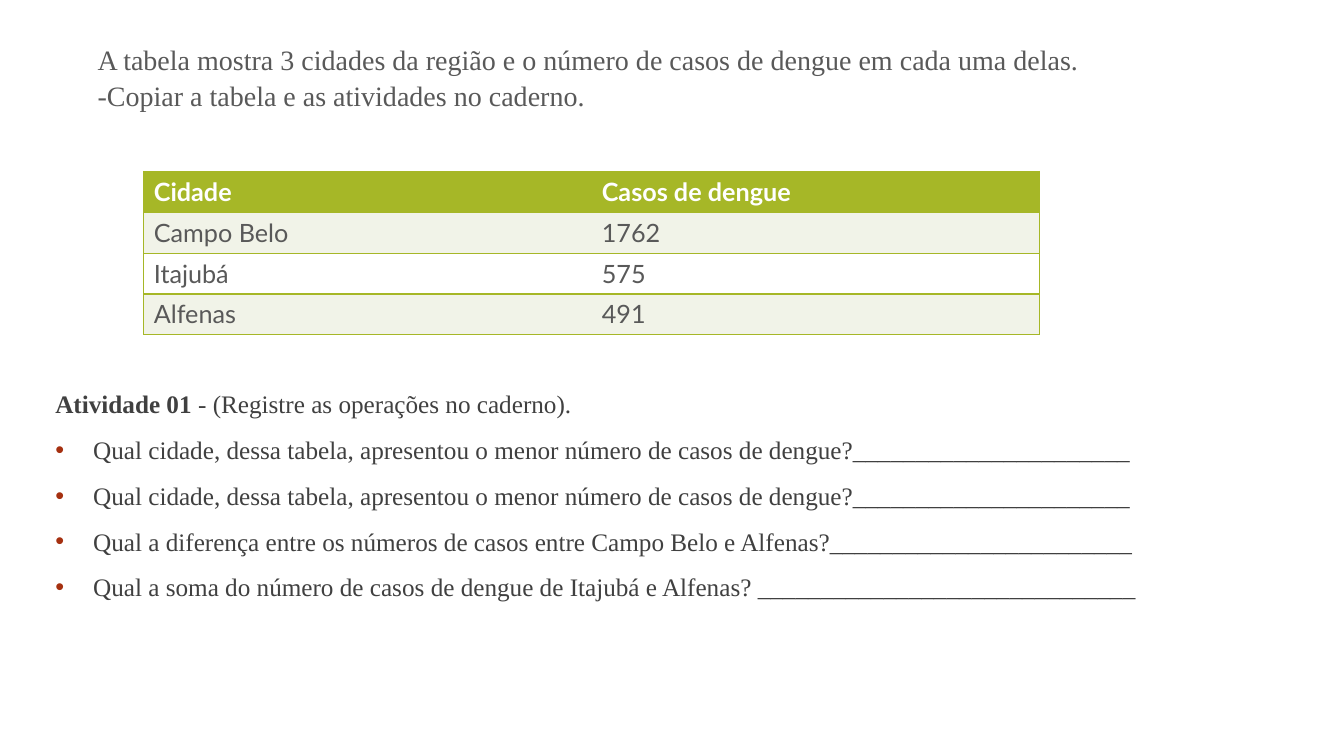
from dataclasses import dataclass

from lxml.etree import SubElement
from pptx import Presentation
from pptx.dml.color import RGBColor
from pptx.enum.text import MSO_ANCHOR
from pptx.oxml import parse_xml
from pptx.oxml.ns import nsdecls, qn
from pptx.util import Pt


@dataclass(frozen=True)
class Theme:
    serif: str = "Times New Roman"
    sans: str = "Lato"
    intro_size: int = 20
    body_size: int = 18
    line_spacing: float = 1.05
    question_gap: int = 10
    question_indent: int = 27
    border_width: int = 1
    gray: str = "595959"
    dark: str = "404040"
    white: str = "FFFFFF"
    green: str = "A6B727"
    pale: str = "F1F3E8"
    rust: str = "A53010"


THEME = Theme()

INTRO = [
    "A tabela mostra 3 cidades da região e o número de casos de dengue em cada uma delas.",
    "-Copiar a tabela e as atividades no caderno.",
]
CASES = [
    ("Cidade", "Casos de dengue"),
    ("Campo Belo", "1762"),
    ("Itajubá", "575"),
    ("Alfenas", "491"),
]
# Each question with the length of its answer line
QUESTIONS = [
    ("Qual cidade, dessa tabela, apresentou o menor número de casos de dengue?", 22),
    ("Qual cidade, dessa tabela, apresentou o menor número de casos de dengue?", 22),
    ("Qual a diferença entre os números de casos entre Campo Belo e Alfenas?", 24),
    ("Qual a soma do número de casos de dengue de Itajubá e Alfenas? ", 30),
]


def write(paragraph, text, *, size=THEME.body_size, face=THEME.serif,
          color=THEME.dark, bold=False):
    run = paragraph.add_run()
    run.text = text
    run.font.size = Pt(size)
    run.font.name = face
    run.font.bold = bold
    run.font.color.rgb = RGBColor.from_string(color)


def add_frame(slide, left, top, width, height):
    frame = slide.shapes.add_textbox(Pt(left), Pt(top), Pt(width), Pt(height)).text_frame
    frame.word_wrap = True
    frame.vertical_anchor = MSO_ANCHOR.TOP
    return frame


def add_bullet(paragraph):
    properties = paragraph._p.get_or_add_pPr()
    properties.set("marL", str(Pt(THEME.question_indent)))
    properties.set("indent", str(-Pt(THEME.question_indent)))
    bullet_color = SubElement(properties, qn("a:buClr"))
    SubElement(bullet_color, qn("a:srgbClr"), val=THEME.rust)
    SubElement(properties, qn("a:buFont"), typeface="Arial")
    SubElement(properties, qn("a:buChar"), char="•")


def set_borders(cell, shown):
    properties = cell._tc.get_or_add_tcPr()
    for position, side in enumerate("LRTB"):
        paint = (f'<a:solidFill><a:srgbClr val="{THEME.green}"/></a:solidFill>'
                 if side in shown else "<a:noFill/>")
        border = parse_xml(f'<a:ln{side} {nsdecls("a")} w="{Pt(THEME.border_width)}">'
                           f'{paint}</a:ln{side}>')
        properties.insert(position, border)


def add_intro(slide, left, top, width, height):
    paragraph = add_frame(slide, left, top, width, height).paragraphs[0]
    paragraph.line_spacing = THEME.line_spacing
    for index, line in enumerate(INTRO):
        if index:
            paragraph.add_line_break()
        write(paragraph, line, size=THEME.intro_size, color=THEME.gray)


def add_cases(slide, left, top, width, height):
    table = slide.shapes.add_table(len(CASES), len(CASES[0]), Pt(left), Pt(top),
                                   Pt(width), Pt(height)).table
    table.horz_banding = False
    for row, values in enumerate(CASES):
        header = row == 0
        fill = THEME.green if header else THEME.pale if row % 2 else THEME.white
        for column, value in enumerate(values):
            cell = table.cell(row, column)
            cell.fill.solid()
            cell.fill.fore_color.rgb = RGBColor.from_string(fill)
            # Only the outer vertical edges are ruled
            set_borders(cell, "TBR" if column else "TBL")
            write(cell.text_frame.paragraphs[0], value, face=THEME.sans, bold=header,
                  color=THEME.white if header else THEME.gray)


def add_activity(slide, left, top, width, height):
    frame = add_frame(slide, left, top, width, height)
    heading = frame.paragraphs[0]
    heading.line_spacing = THEME.line_spacing
    write(heading, "Atividade 01 ", bold=True)
    write(heading, "- (Registre as operações no caderno).")
    for question, answer_length in QUESTIONS:
        paragraph = frame.add_paragraph()
        add_bullet(paragraph)
        paragraph.line_spacing = THEME.line_spacing
        paragraph.space_before = Pt(THEME.question_gap)
        write(paragraph, question + "_" * answer_length)


def main():
    presentation = Presentation()
    presentation.slide_width, presentation.slide_height = Pt(960), Pt(540)
    slide = presentation.slides.add_slide(presentation.slide_layouts[6])
    add_intro(slide, 62.6, 26, 840, 78)
    add_cases(slide, 102.7, 122.4, 640, 116.8)
    add_activity(slide, 32.4, 273, 885, 157)
    presentation.save("out.pptx")


if __name__ == "__main__":
    main()
